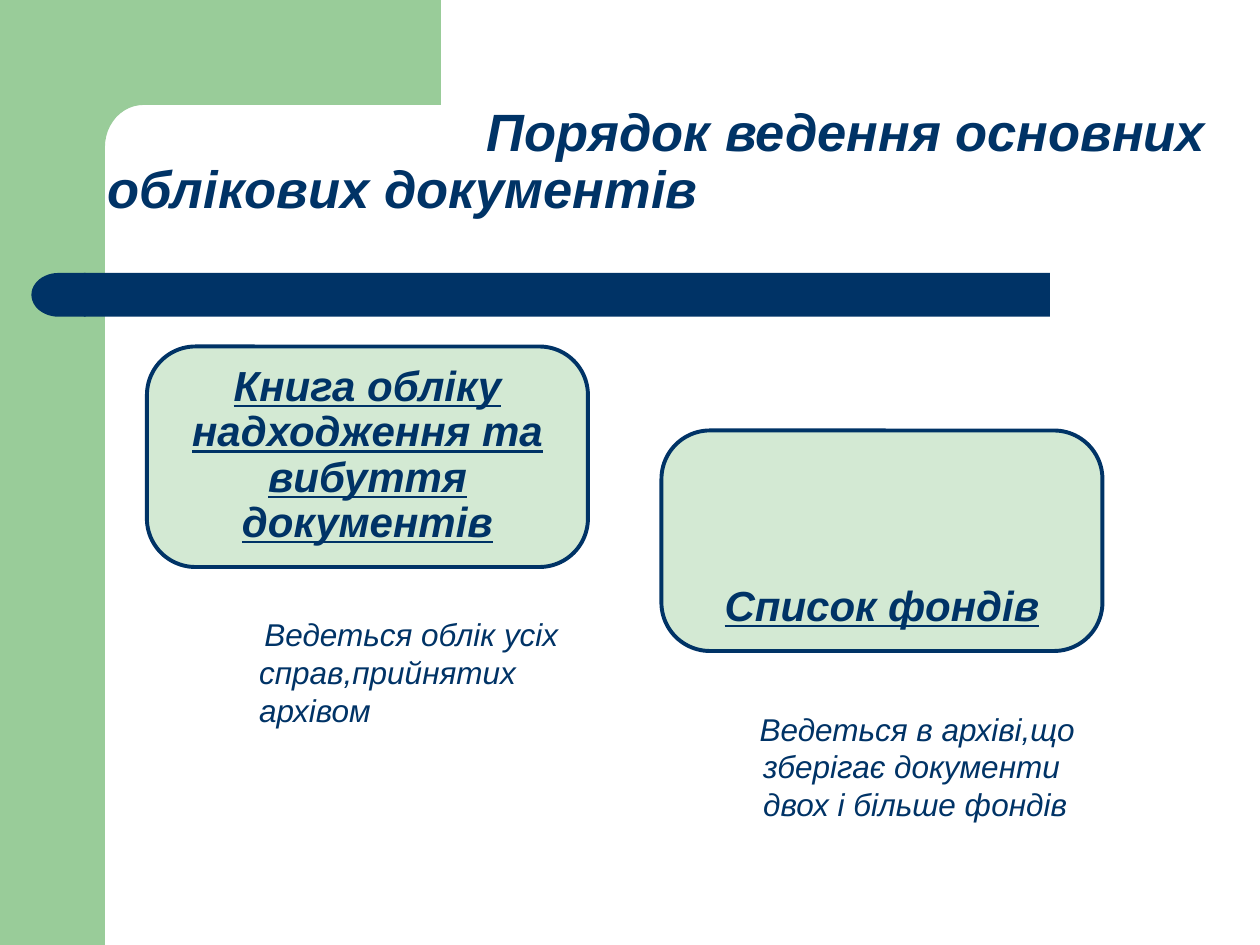
import math
from lxml import etree
from pptx import Presentation
from pptx.dml.color import RGBColor
from pptx.enum import shapes as kinds, text as txt
from pptx.oxml.ns import qn
from pptx.util import Pt

GREEN, NAVY = "99CC99", "003366"
KIND = kinds.MSO_SHAPE


def paint(item, color):
    """Give a shape a plain fill without line or shadow, or colour a font."""
    rgb = RGBColor.from_string(color)
    if hasattr(item, "fill") and hasattr(item, "shadow"):
        item.fill.solid()
        item.fill.fore_color.rgb = rgb
        item.line.fill.background()
        item.shadow.inherit = False
    else:
        item.color.rgb = rgb


def style(para, size, bold=False, line=False):
    font = para.font
    font.name, font.size = "Arial", Pt(size)
    font.bold, font.italic, font.underline = bold, True, line
    paint(font, NAVY)


prs = Presentation()
prs.slide_width, prs.slide_height = Pt(720), Pt(540)
slide = prs.slides.add_slide(prs.slide_layouts[5])
tree = slide.shapes

# Green side band and the corner with its rounded inner edge
band = tree.add_shape(KIND.RECTANGLE, 0, 0, Pt(60), Pt(540))
paint(band, GREEN)
arc = []
for step in range(13):
    turn = math.radians(90 * step / 12)
    arc.append((Pt(82 - 22 * math.sin(turn)), Pt(84 - 24 * math.cos(turn))))
arc = [(x, y) for x, y in arc]
edge = [(Pt(252), Pt(60)), *arc, (Pt(60), Pt(92)), (Pt(36), Pt(92)), (Pt(36), 0)]
build = tree.build_freeform(Pt(252), 0, scale=1)
build.add_line_segments(edge, close=True)
paint(build.convert_to_shape(), GREEN)

# Navy bar with a round left end
bar = tree.add_shape(KIND.RECTANGLE, Pt(48), Pt(156), Pt(552), Pt(25))
cap = tree.add_shape(KIND.FLOWCHART_DELAY, Pt(18), Pt(156), Pt(31), Pt(25))
cap._element.spPr.find(qn("a:xfrm")).set("flipH", "1")
for part in (bar, cap):
    paint(part, NAVY)

# Title
title = tree.title
title.left, title.top, title.width, title.height = Pt(54), Pt(30), Pt(702), Pt(126)
frame = title.text_frame
frame.text = "Порядок ведення основних облікових документів"
frame.vertical_anchor = txt.MSO_ANCHOR.MIDDLE
frame.auto_size = txt.MSO_AUTO_SIZE.NONE
para = frame.paragraphs[0]
para.alignment, para.line_spacing = txt.PP_ALIGN.LEFT, 0.9
para._p.get_or_add_pPr().set("indent", str(Pt(217)))
style(para, 30, bold=True)

# Boxes: left, top, heading; caption: left, top, first-line indent, wording
cards = [
    (84, 198, "Книга обліку надходження та вибуття документів",
     114, 348, 3, "Ведеться облік усіх справ,прийнятих архівом"),
    (378, 246, "Список фондів",
     402, 402, -2, "Ведеться в архіві,що зберігає документи двох і більше фондів"),
]
for left, top, head, x, y, indent, words in cards:
    box = tree.add_shape(KIND.ROUNDED_RECTANGLE, Pt(left), Pt(top), Pt(252), Pt(126))
    box.adjustments[0] = 0.22
    paint(box, GREEN)
    tint = box._element.spPr.find(qn("a:solidFill"))[0]
    etree.SubElement(tint, qn("a:alpha"), val="43000")
    box.line.color.rgb = RGBColor.from_string(NAVY)
    box.line.width = Pt(2.25)
    frame = box.text_frame
    frame.text, frame.word_wrap = head, True
    frame.vertical_anchor = txt.MSO_ANCHOR.BOTTOM
    para = frame.paragraphs[0]
    para.alignment, para.line_spacing = txt.PP_ALIGN.CENTER, 0.9
    style(para, 24, bold=True, line=True)

    note = tree.add_textbox(Pt(x), Pt(y), Pt(222), Pt(72))
    frame = note.text_frame
    frame.text, frame.word_wrap = words, True
    para = frame.paragraphs[0]
    props = para._p.get_or_add_pPr()
    props.set("marL", str(Pt(27)))
    props.set("indent", str(Pt(indent)))
    style(para, 18)

prs.save("out.pptx")
